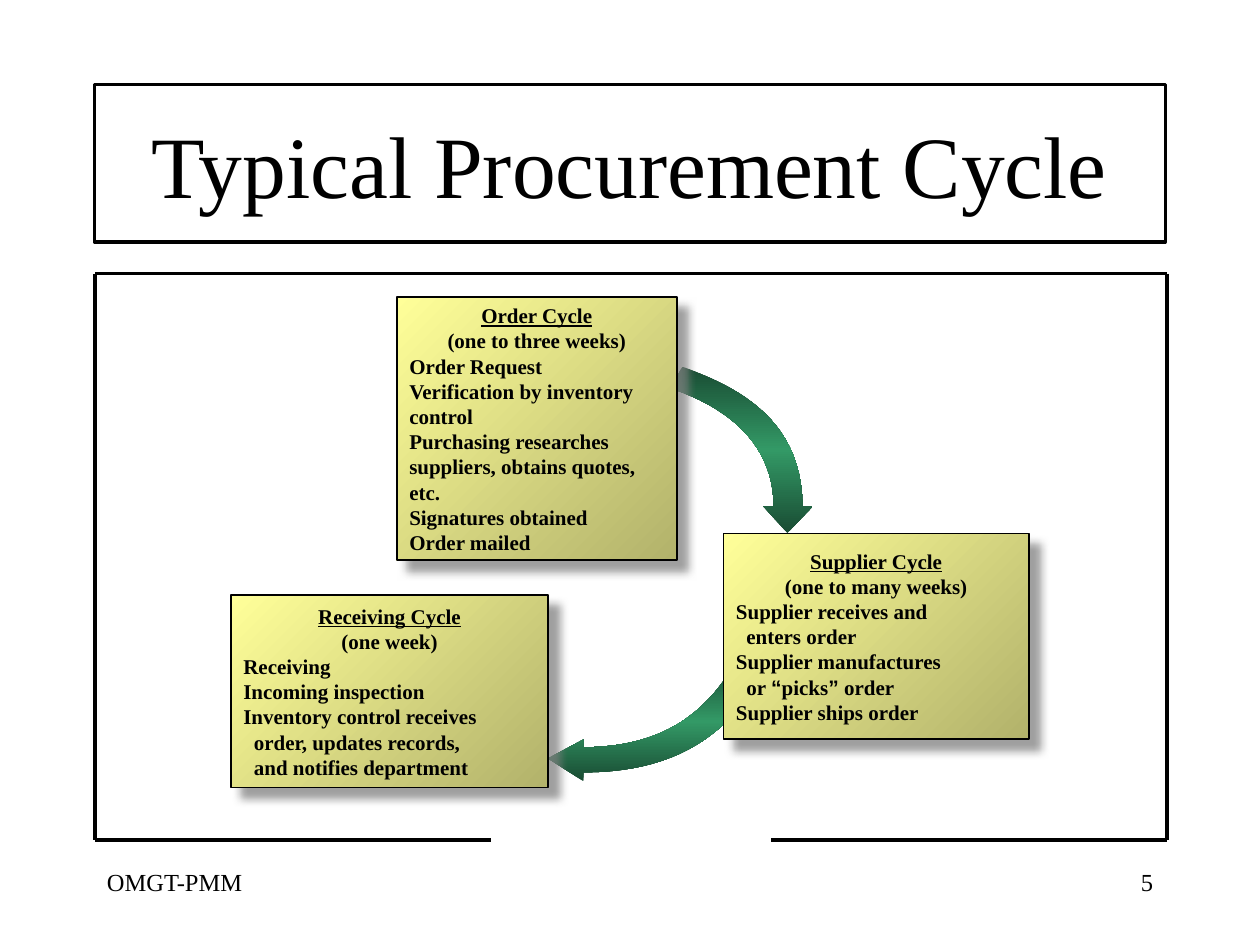
from itertools import groupby
from lxml.etree import SubElement
from pptx import Presentation
from pptx.dml.color import RGBColor
from pptx.enum.shapes import MSO_CONNECTOR, MSO_SHAPE
from pptx.enum.text import MSO_ANCHOR, PP_ALIGN
from pptx.oxml import parse_xml
from pptx.oxml.ns import nsdecls, qn
from pptx.util import Pt

COLORS = {"ink": "000000", "yellow": "FFFF99", "olive": "B2B26B",
          "dark_green": "194C33", "green": "339966", "shadow": "808080"}
FONT, QUOTE_FONT = "Times New Roman", "Arial"
INDENT = 6  # points, for continuation lines

TITLE = "Typical Procurement Cycle"
TITLE_BOX = (54, 48.2, 612, 90)
FOOTERS = [("OMGT-PMM", 54, PP_ALIGN.LEFT), ("5", 516, PP_ALIGN.RIGHT)]

# Frame around the content, open in the middle of its bottom edge
LEFT, TOP, RIGHT, BOTTOM = 54.4, 156.4, 667, 480
FRAME = [(LEFT, TOP, RIGHT, TOP), (LEFT, TOP, LEFT, BOTTOM),
         (RIGHT, TOP, RIGHT, BOTTOM), (LEFT, BOTTOM, 280.8, BOTTOM),
         (440.6, BOTTOM, RIGHT, BOTTOM)]

# Box, heading, duration, lines as (continuation?, text)
CYCLES = [
    ((226.8, 169.7, 160, 150.5), "Order Cycle", "(one to three weeks)", [
        (False, "Order Request"),
        (False, "Verification by inventory control"),
        (False, "Purchasing researches suppliers, obtains quotes, etc."),
        (False, "Signatures obtained"),
        (False, "Order mailed")]),
    ((413.5, 304.8, 174.5, 117.5), "Supplier Cycle", "(one to many weeks)", [
        (False, "Supplier receives and"),
        (True, "enters order"),
        (False, "Supplier manufactures"),
        (True, "or “picks” order"),
        (False, "Supplier ships order")]),
    ((132, 340, 181.3, 110), "Receiving Cycle", "(one week)", [
        (False, "Receiving"),
        (False, "Incoming inspection"),
        (False, "Inventory control receives"),
        (True, "order, updates records,"),
        (True, "and notifies department")]),
]

# Curved arrows: Bezier edge to the head, three head points, Bezier edge back
ARROWS = [
    ([(383, 221.8), (409, 230.4), (442.1, 249.1), (442.1, 289.4)],
     [(436.3, 289.4), (450, 304.6), (464.4, 289.4)],
     [(458.6, 289.4), (458.6, 235.4), (414, 218.9), (390, 209.5)]),
    ([(420.5, 378), (405.4, 404.6), (381.6, 427), (333.4, 427)],
     [(333.4, 422.6), (313.2, 433.4), (333.4, 446.4)],
     [(333.4, 441.4), (393.8, 441.4), (420.5, 412.6), (437, 383)]),
]


def rgb(name):
    return RGBColor.from_string(COLORS[name])


def set_gradient(s, names, angle):
    s.fill.gradient()
    grad = s._element.spPr.find(qn("a:gradFill"))
    stops = "".join(
        f'<a:gs pos="{i * 100000 // (len(names) - 1)}">'
        f'<a:srgbClr val="{COLORS[name]}"/></a:gs>'
        for i, name in enumerate(names))
    new = parse_xml(f'<a:gradFill {nsdecls("a")} rotWithShape="1"><a:gsLst>{stops}'
                    f'</a:gsLst><a:lin ang="{angle * 60000}" scaled="0"/></a:gradFill>')
    grad.getparent().replace(grad, new)


def add_shadow(s):
    s.shadow.inherit = False
    effects = s._element.spPr.find(qn("a:effectLst"))
    effects.append(parse_xml(
        f'<a:outerShdw {nsdecls("a")} blurRad="{Pt(5)}" dist="{Pt(8.5)}" '
        f'dir="2700000" algn="ctr" rotWithShape="0"><a:srgbClr '
        f'val="{COLORS["shadow"]}"><a:alpha val="75000"/></a:srgbClr></a:outerShdw>'))


def style(r, size, bold=False, font=FONT):
    r.font.size, r.font.bold, r.font.name = Pt(size), bold, font
    r.font.color.rgb = rgb("ink")


def add_text(p, text, size, align=PP_ALIGN.LEFT, bold=False):
    """Write a line, giving curly quotes their own font."""
    p.alignment = align
    for is_quote, chars in groupby(text, key=lambda c: c in "“”"):
        r = p.add_run()
        r.text = "".join(chars)
        style(r, size, bold, QUOTE_FONT if is_quote else FONT)


def add_rect(slide, box, line_width):
    s = slide.shapes.add_shape(MSO_SHAPE.RECTANGLE, *map(Pt, box))
    s.shadow.inherit = False
    s.fill.background()
    s.line.color.rgb = rgb("ink")
    s.line.width = Pt(line_width)
    s.text_frame.vertical_anchor = MSO_ANCHOR.MIDDLE
    return s


def add_cycle(slide, box, heading, duration, lines):
    s = add_rect(slide, box, 1)
    set_gradient(s, ["yellow", "olive"], 45)
    add_shadow(s)
    tf = s.text_frame
    add_text(tf.paragraphs[0], heading, 12, PP_ALIGN.CENTER, True)
    tf.paragraphs[0].runs[0].font.underline = True
    add_text(tf.add_paragraph(), duration, 12, PP_ALIGN.CENTER, True)
    for continued, text in lines:
        p = tf.add_paragraph()
        add_text(p, text, 12, bold=True)
        if continued:
            p._p.get_or_add_pPr().set("marL", str(Pt(INDENT)))


def bezier(points, steps=24):
    for i in range(steps + 1):
        t = i / steps
        weights = ((1 - t) ** 3, 3 * t * (1 - t) ** 2, 3 * t * t * (1 - t), t ** 3)
        yield tuple(sum(w * v for w, v in zip(weights, axis)) for axis in zip(*points))


def add_arrow(slide, edge_out, head, edge_back):
    outline = [*bezier(edge_out), *head, *bezier(edge_back)]
    (x, y), *rest = [(Pt(px), Pt(py)) for px, py in outline]
    builder = slide.shapes.build_freeform(x, y, scale=1.0)
    builder.add_line_segments(rest, close=True)
    s = builder.convert_to_shape()
    s.shadow.inherit = False
    set_gradient(s, ["dark_green", "green", "dark_green"], 90)
    s.line.fill.background()


def main():
    prs = Presentation()
    prs.slide_width, prs.slide_height = Pt(720), Pt(540)
    slide = prs.slides.add_slide(prs.slide_layouts[6])

    # Title
    s = add_rect(slide, TITLE_BOX, 2)
    add_text(s.text_frame.paragraphs[0], TITLE, 50, PP_ALIGN.CENTER)

    # Frame
    for ends in FRAME:
        line = slide.shapes.add_connector(MSO_CONNECTOR.STRAIGHT, *map(Pt, ends))
        line.line.color.rgb = rgb("ink")
        line.line.width = Pt(2)
        SubElement(line._element.spPr, qn("a:effectLst"))

    # Arrows go behind the cycle boxes
    for arrow in ARROWS:
        add_arrow(slide, *arrow)
    for cycle in CYCLES:
        add_cycle(slide, *cycle)

    # Footer
    for text, left, align in FOOTERS:
        tf = slide.shapes.add_textbox(Pt(left), Pt(492), Pt(150), Pt(36)).text_frame
        tf.word_wrap = True
        add_text(tf.paragraphs[0], text, 14, align)

    prs.save("out.pptx")


if __name__ == "__main__":
    main()
